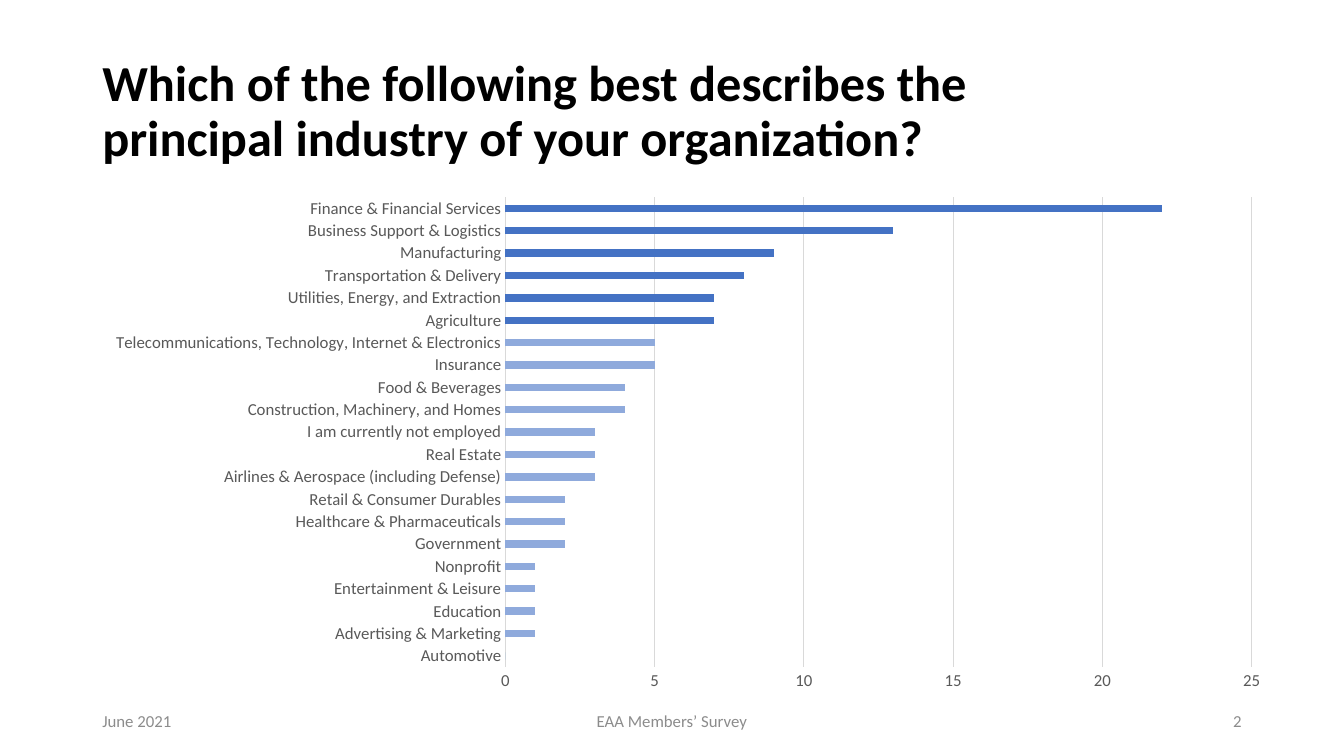
from pptx import Presentation
from pptx.chart.data import CategoryChartData
from pptx.dml.color import RGBColor
from pptx.enum.chart import XL_CHART_TYPE, XL_TICK_MARK
from pptx.enum.text import MSO_ANCHOR, PP_ALIGN
from pptx.util import Pt

BAR = XL_CHART_TYPE.BAR_CLUSTERED
NO_TICK = XL_TICK_MARK.NONE
MIDDLE = MSO_ANCHOR.MIDDLE
LEFT, CENTER, RIGHT = PP_ALIGN.LEFT, PP_ALIGN.CENTER, PP_ALIGN.RIGHT

EMU_PER_PX = 9525
LEADING_MIN = 7

INDUSTRIES = [
    ("Automotive", 0),
    ("Advertising & Marketing", 1),
    ("Education", 1),
    ("Entertainment & Leisure", 1),
    ("Nonprofit", 1),
    ("Government", 2),
    ("Healthcare & Pharmaceuticals", 2),
    ("Retail & Consumer Durables", 2),
    ("Airlines & Aerospace (including Defense)", 3),
    ("Real Estate", 3),
    ("I am currently not employed", 3),
    ("Construction, Machinery, and Homes", 4),
    ("Food & Beverages", 4),
    ("Insurance", 5),
    ("Telecommunications, Technology, Internet & Electronics", 5),
    ("Agriculture", 7),
    ("Utilities, Energy, and Extraction", 7),
    ("Transportation & Delivery", 8),
    ("Manufacturing", 9),
    ("Business Support & Logistics", 13),
    ("Finance & Financial Services", 22),
]


def px(*lengths):
    return [n * EMU_PER_PX for n in lengths]


def rgb(color):
    return RGBColor.from_string(color)


class SlideBuilder:
    """Holds the style and the current slide, and adds elements to it."""

    font = "Calibri"
    black, label, footer, grid = "000000", "595959", "8C8C8C", "D9D9D9"
    series, leading, minor = "5B9BD5", "4472C4", "8FAADC"

    def __init__(self, prs):
        self.slide = prs.slides.add_slide(prs.slide_layouts[6])

    def style(self, font, size, color):
        font.name = self.font
        font.size = Pt(size)
        font.color.rgb = rgb(color)

    def text(self, box, text, size, color, align=LEFT, bold=False, spacing=None):
        tf = self.slide.shapes.add_textbox(*px(*box)).text_frame
        tf.word_wrap = True
        tf.vertical_anchor = MIDDLE
        tf.text = text
        p = tf.paragraphs[0]
        p.alignment = align
        p.line_spacing = spacing
        r = p.runs[0]
        self.style(r.font, size, color)
        r.font.bold = bold

    def axis(self, axis):
        axis.major_tick_mark = axis.minor_tick_mark = NO_TICK
        self.style(axis.tick_labels.font, 12, self.label)

    def line(self, line):
        line.color.rgb = rgb(self.grid)
        line.width = Pt(0.75)

    def bar_chart(self, box, rows):
        data = CategoryChartData()
        data.categories = [name for name, _ in rows]
        data.add_series("Series 1", [count for _, count in rows])
        chart = self.slide.shapes.add_chart(BAR, *px(*box), data).chart
        chart.has_legend = chart.has_title = False
        self.style(chart.font, 10, self.black)

        cat, val = chart.category_axis, chart.value_axis
        self.axis(cat)
        self.line(cat.format.line)
        self.axis(val)
        val.format.line.fill.background()
        val.minimum_scale, val.maximum_scale, val.major_unit = 0, 25, 5
        val.has_major_gridlines = True
        self.line(val.major_gridlines.format.line)

        plot = chart.plots[0]
        plot.gap_width, plot.overlap = 205, 100
        plot.vary_by_categories = False
        ser = plot.series[0]
        ser.invert_if_negative = False
        self.fill(ser, self.series)
        for i, (_, count) in enumerate(rows):
            if count:
                color = self.leading if count >= LEADING_MIN else self.minor
                self.fill(ser.points[i], color)

    def fill(self, bar, color):
        bar.format.fill.solid()
        bar.format.fill.fore_color.rgb = rgb(color)


def main():
    prs = Presentation()
    prs.slide_width, prs.slide_height = px(1280, 720)
    s = SlideBuilder(prs)
    s.text((88, 38, 1024, 139),
           "Which of the following best describes the principal industry of your organization?",
           36, s.black, bold=True, spacing=0.9)
    s.bar_chart((88, 178, 1135, 490), INDUSTRIES)
    for left, width, text, align in [
        (88, 288, "June 2021", LEFT),
        (424, 432, "EAA Members’ Survey", CENTER),
        (904, 288, "2", RIGHT),
    ]:
        s.text((left, 667, width, 38), text, 12, s.footer, align)
    prs.save("out.pptx")


if __name__ == "__main__":
    main()
